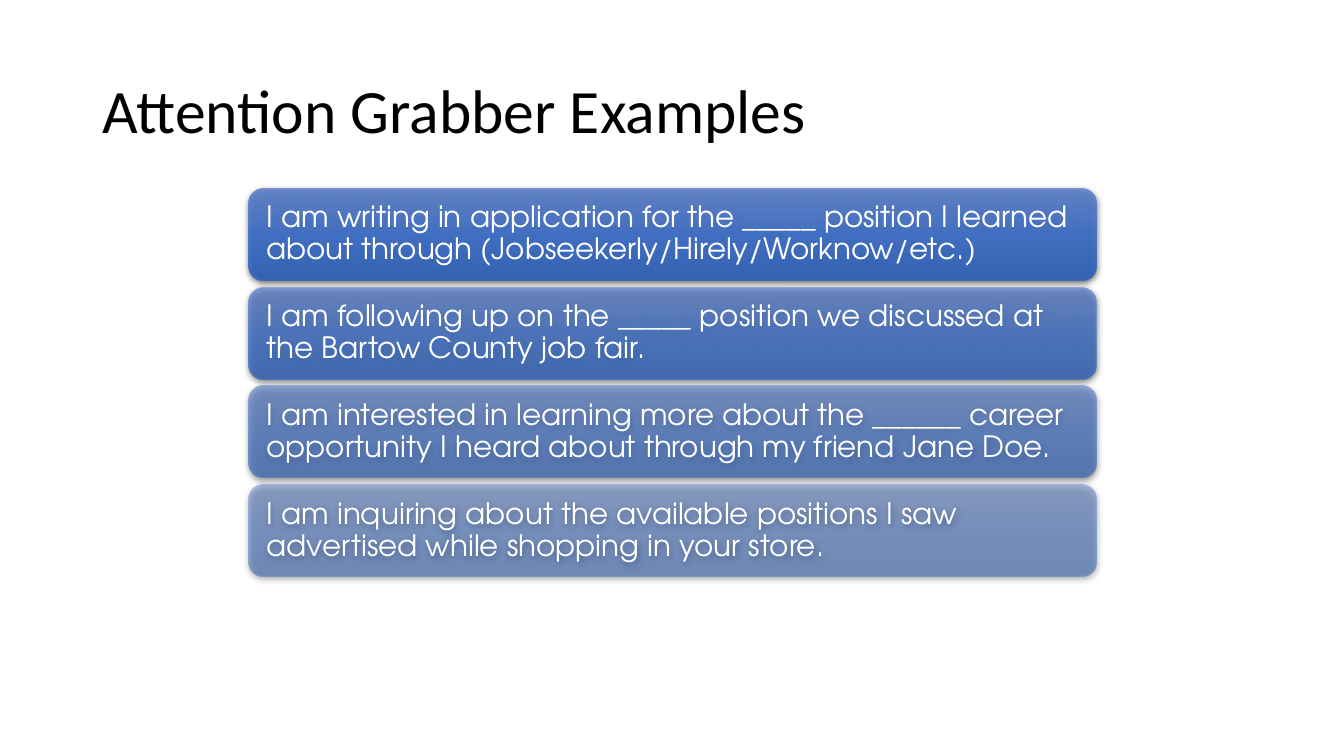
from pptx import Presentation
from pptx.dml.color import RGBColor as RGB
from pptx.enum.shapes import MSO_SHAPE as Shape
from pptx.enum.text import MSO_ANCHOR as Anchor, PP_ALIGN as Align
from pptx.oxml import parse_xml
from pptx.oxml.ns import nsdecls
from pptx.util import Inches, Pt

HUES = {"title": "000000", "text": "FFFFFF", "shade": "000000",
        "top": "6183CB", "mid": "3E70CA", "low": "3062BB"}
LINES = [
    "I am writing in application for the _____ position I learned "
    "about through (Jobseekerly/Hirely/Worknow/etc.)",
    "I am following up on the _____ position we discussed at "
    "the Bartow County job fair.",
    "I am interested in learning more about the ______ career "
    "opportunity I heard about through my friend Jane Doe.",
    "I am inquiring about the available positions I saw "
    "advertised while shopping in your store.",
]
ALPHAS = [90, 77, 63, 50]  # percent, fading down the list
LEFT, TOP, WIDE, HIGH, STEP = 2.47, 1.87, 8.4, 0.91, 0.98


def write(frame, text, font, size, hue):
    frame.word_wrap = True
    frame.vertical_anchor = Anchor.MIDDLE
    frame.text = text
    para = frame.paragraphs[0]
    para.alignment = Align.LEFT
    para.line_spacing = 0.9
    run = para.runs[0]
    run.font.name = font
    run.font.size = Pt(size)
    run.font.color.rgb = RGB.from_string(HUES[hue])


def tint(hue, alpha):
    return (f'<a:srgbClr val="{HUES[hue]}">'
            f'<a:alpha val="{alpha * 1000}"/></a:srgbClr>')


deck = Presentation()
deck.slide_width, deck.slide_height = Inches(13.33), Inches(7.5)
slide = deck.slides.add_slide(deck.slide_layouts[6])

# Title
title = slide.shapes.add_textbox(Inches(0.92), Inches(0.4),
                                 Inches(11.5), Inches(1.45))
write(title.text_frame, "Attention Grabber Examples", "Calibri", 44, "title")

# Stack of example bars
for row, (line, alpha) in enumerate(zip(LINES, ALPHAS)):
    bar = slide.shapes.add_shape(
        Shape.ROUNDED_RECTANGLE, Inches(LEFT), Inches(TOP + row * STEP),
        Inches(WIDE), Inches(HIGH))
    bar.line.fill.background()
    bar.shadow.inherit = False
    frame = bar.text_frame
    frame.margin_left = frame.margin_right = Inches(0.13)
    frame.margin_top = frame.margin_bottom = Inches(0.13)
    write(frame, line, "TeX Gyre Adventor", 21, "text")

    # See-through gradient, placed right after the geometry
    stops = "".join(f'<a:gs pos="{pos}">{tint(hue, alpha)}</a:gs>'
                    for pos, hue in ((0, "top"), (50000, "mid"), (100000, "low")))
    props = bar.element.spPr
    props.insert(2, parse_xml(
        f'<a:gradFill {nsdecls("a")} rotWithShape="1"><a:gsLst>{stops}</a:gsLst>'
        '<a:lin ang="5400000" scaled="0"/></a:gradFill>'))

    # Soft shadow below
    props.find("{*}effectLst").append(parse_xml(
        f'<a:outerShdw {nsdecls("a")} blurRad="{Pt(4.5)}" dist="{Pt(1.5)}" '
        'dir="5400000" algn="ctr" rotWithShape="0">'
        f'{tint("shade", 63)}</a:outerShdw>'))

deck.save("out.pptx")
